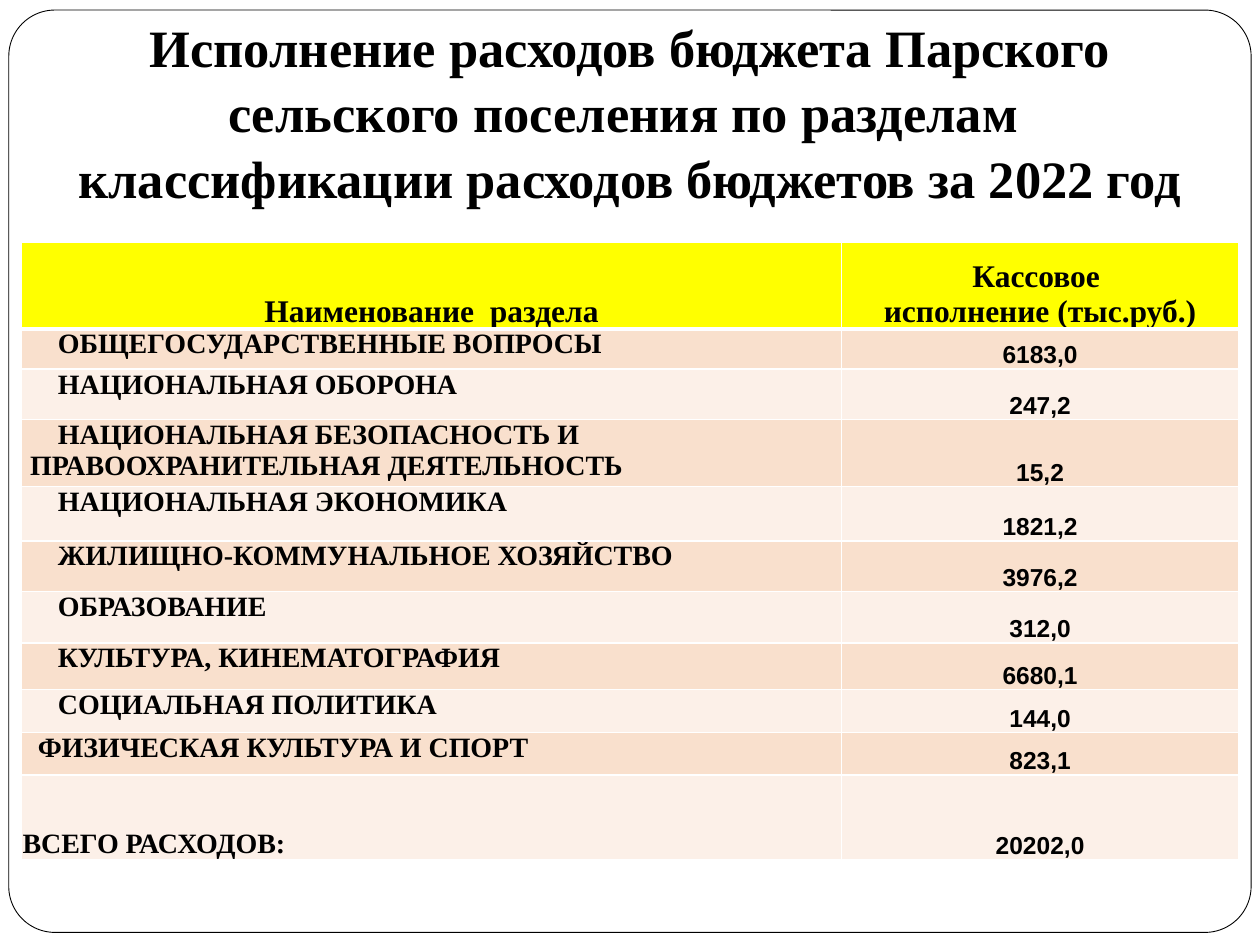
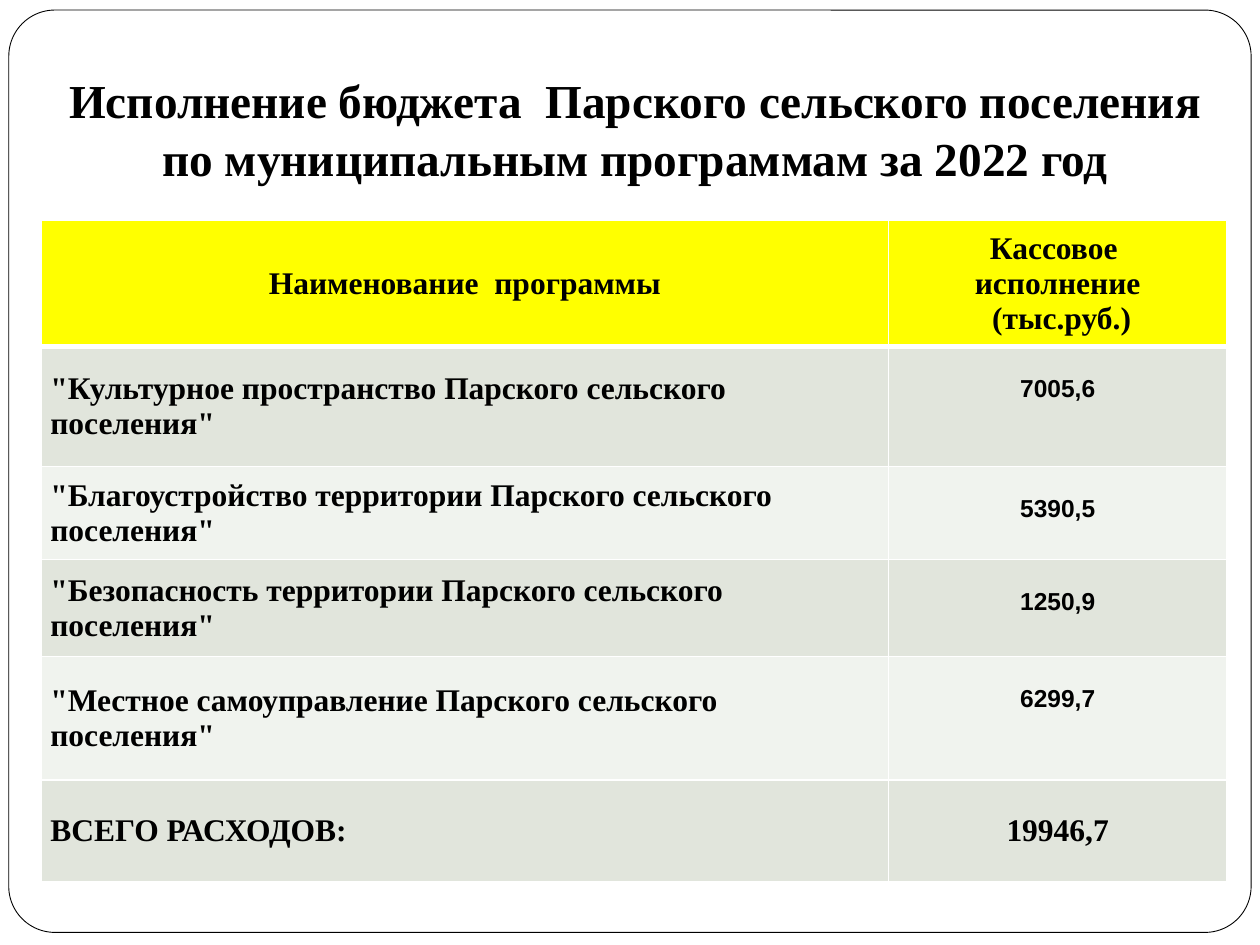
from dataclasses import dataclass, replace

from lxml import etree
from pptx import Presentation
from pptx import util as u
from pptx.dml.color import RGBColor
from pptx.enum import shapes, text
from pptx.oxml import ns

COLORS = {
    "ink": "000000", "paper": "FFFFFF", "header": "FFFF00",
    "peach": "F9E0CD", "peach_light": "FCF0E8",
    "sage": "E1E5DC", "sage_light": "F0F3EE",
}
SERIF, SANS = "Times New Roman", "Arial"
LEFT, CENTER = text.PP_ALIGN.LEFT, text.PP_ALIGN.CENTER
TOP, MIDDLE, BOTTOM = (text.MSO_ANCHOR.TOP, text.MSO_ANCHOR.MIDDLE,
                       text.MSO_ANCHOR.BOTTOM)
TIGHT = (0.01, 0.01, 0.01, 0)
SIDES = (0.07, 0, 0.07, 0)
ROOMY = (0.1, 0.05, 0.1, 0.05)


@dataclass(frozen=True)
class CellStyle:
    size: int
    font: str = SERIF
    align: int = LEFT
    anchor: int = MIDDLE
    margins: tuple = SIDES
    indent: float = 0


def rgb(name):
    return RGBColor.from_string(COLORS[name])


class SlideBuilder:
    """Holds the shared style and the slide being built."""

    def __init__(self, deck):
        self.deck = deck
        self.slide = None

    def new_slide(self):
        self.slide = self.deck.slides.add_slide(self.deck.slide_layouts[6])
        self.frame()

    def frame(self):
        frame = self.slide.shapes.add_shape(
            shapes.MSO_SHAPE.ROUNDED_RECTANGLE,
            u.Inches(0.07), u.Inches(0.08), u.Inches(9.86), u.Inches(7.32))
        frame.adjustments[0] = 0.05
        frame.shadow.inherit = False
        frame.fill.solid()
        frame.fill.fore_color.rgb = rgb("paper")
        frame.line.color.rgb = rgb("ink")
        frame.line.width = u.Pt(0.5)

    def set_margins(self, target, margins):
        (target.margin_left, target.margin_top,
         target.margin_right, target.margin_bottom) = map(u.Inches, margins)

    def set_text(self, frame, content, size, font, align):
        frame.text = content
        for para in frame.paragraphs:
            para.alignment = align
            for span in para.runs:
                span.font.size = u.Pt(size)
                span.font.name = font
                span.font.bold = True
                span.font.color.rgb = rgb("ink")

    def title(self, content, area, size, anchor):
        box = self.slide.shapes.add_textbox(*map(u.Inches, area))
        frame = box.text_frame
        frame.word_wrap = True
        frame.vertical_anchor = anchor
        self.set_margins(frame, (0.1, 0.05, 0.1, 0.1))
        self.set_text(frame, content, size, SERIF, CENTER)
        frame.paragraphs[0].line_spacing = 1.04

    def cell(self, cell, content, style, fill):
        self.set_margins(cell, style.margins)
        cell.vertical_anchor = style.anchor
        self.set_text(cell.text_frame, content, style.size, style.font, style.align)
        if style.indent:
            props = cell.text_frame.paragraphs[0]._p.get_or_add_pPr()
            props.set("indent", str(u.Inches(style.indent)))
        cell.fill.solid()
        cell.fill.fore_color.rgb = rgb(fill)

    def borders(self, cell, row):
        widths = {"lnL": 1, "lnR": 1, "lnT": 3 if row == 1 else 1,
                  "lnB": 3 if row == 0 else 1}
        props = cell._tc.get_or_add_tcPr()
        for position, (side, width) in enumerate(widths.items()):
            line = etree.Element(ns.qn(f"a:{side}"), w=str(u.Pt(width)))
            fill = etree.SubElement(line, ns.qn("a:solidFill"))
            etree.SubElement(fill, ns.qn("a:srgbClr"), val=COLORS["paper"])
            props.insert(position, line)

    def table(self, corner, widths, heights, rows, styles, bands):
        """rows holds text pairs, styles the matching pairs of cell styles."""
        size = (sum(widths), sum(heights))
        table = self.slide.shapes.add_table(
            len(rows), len(widths), *map(u.Inches, corner + size)).table
        table.horz_banding = False
        for column, width in zip(table.columns, widths):
            column.width = u.Inches(width)
        for index, (row, height) in enumerate(zip(table.rows, heights)):
            row.height = u.Inches(height)
            fill = bands[(index - 1) % 2] if index else "header"
            for cell, content, style in zip(row.cells, rows[index], styles[index]):
                self.cell(cell, content, style, fill)
                self.borders(cell, index)


def sections_slide(builder):
    builder.new_slide()
    builder.title(
        "Исполнение расходов бюджета Парского сельского поселения по разделам  "
        "классификации расходов бюджетов за 2022 год",
        (0.25, 0.05, 9.5, 1.6), 30, TOP)

    rows = [
        ("Наименование  раздела", "Кассовое \nисполнение (тыс.руб.)"),
        ("ОБЩЕГОСУДАРСТВЕННЫЕ ВОПРОСЫ", "6183,0"),
        ("НАЦИОНАЛЬНАЯ ОБОРОНА", "247,2"),
        ("НАЦИОНАЛЬНАЯ БЕЗОПАСНОСТЬ И ПРАВООХРАНИТЕЛЬНАЯ ДЕЯТЕЛЬНОСТЬ", "15,2"),
        ("НАЦИОНАЛЬНАЯ ЭКОНОМИКА", "1821,2"),
        ("ЖИЛИЩНО-КОММУНАЛЬНОЕ ХОЗЯЙСТВО", "3976,2"),
        ("ОБРАЗОВАНИЕ", "312,0"),
        ("КУЛЬТУРА, КИНЕМАТОГРАФИЯ", "6680,1"),
        ("СОЦИАЛЬНАЯ ПОЛИТИКА", "144,0"),
        ("ФИЗИЧЕСКАЯ КУЛЬТУРА И СПОРТ", "823,1"),
        ("ВСЕГО РАСХОДОВ:", "20202,0"),
    ]
    header = CellStyle(18, align=CENTER, anchor=BOTTOM, margins=TIGHT)
    section = CellStyle(16, anchor=TOP, indent=0.22)
    sport = replace(section, indent=0.06)
    total = CellStyle(16, anchor=BOTTOM, margins=TIGHT)
    value = replace(header, size=14, font=SANS)
    styles = [(header, header), *[(section, value)] * 8,
              (sport, value), (total, value)]
    heights = (0.69, 0.32, 0.4, 0.49, 0.43, 0.4, 0.41, 0.37, 0.34, 0.34, 0.67)
    builder.table((0.17, 1.92), (6.51, 3.15), heights, rows, styles,
                  ("peach", "peach_light"))


def programs_slide(builder):
    builder.new_slide()
    builder.title(
        "Исполнение бюджета  Парского сельского поселения "
        "по муниципальным программам за 2022 год",
        (0.25, 0.33, 9.58, 1.25), 27, BOTTOM)

    programs = [
        ("Культурное пространство", "7005,6"),
        ("Благоустройство территории", "5390,5"),
        ("Безопасность территории", "1250,9"),
        ("Местное самоуправление", "6299,7"),
    ]
    rows = [
        ("Наименование  программы", "Кассовое \nисполнение\n (тыс.руб.)"),
        *[(f'"{name} Парского сельского поселения"', spent)
          for name, spent in programs],
        ("ВСЕГО РАСХОДОВ:", "19946,7"),
    ]
    header = CellStyle(18, align=CENTER, margins=ROOMY)
    program = CellStyle(18)
    value = CellStyle(14, SANS, CENTER, TOP, (0.01, 0.23, 0.01, 0))
    total = replace(program, align=CENTER)
    styles = [(header, header), *[(program, value)] * len(programs),
              (program, total)]
    heights = (0.92, 0.95, 0.74, 0.77, 0.98, 0.81)
    builder.table((0.33, 1.75), (6.72, 2.69), heights, rows, styles,
                  ("sage", "sage_light"))


def main():
    deck = Presentation()
    deck.slide_width, deck.slide_height = u.Inches(10), u.Inches(7.5)
    builder = SlideBuilder(deck)
    sections_slide(builder)
    programs_slide(builder)
    deck.save("out.pptx")


if __name__ == "__main__":
    main()
